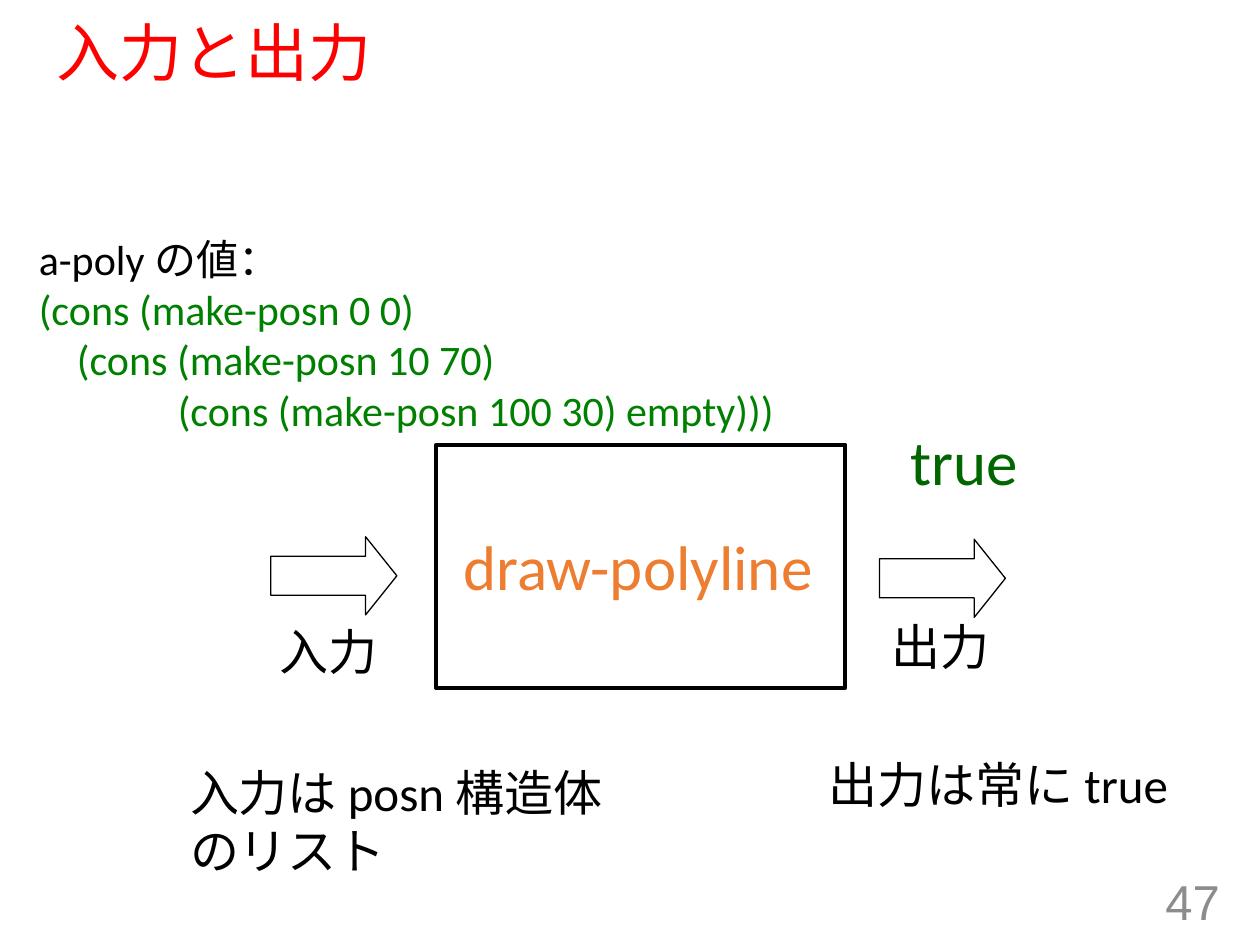
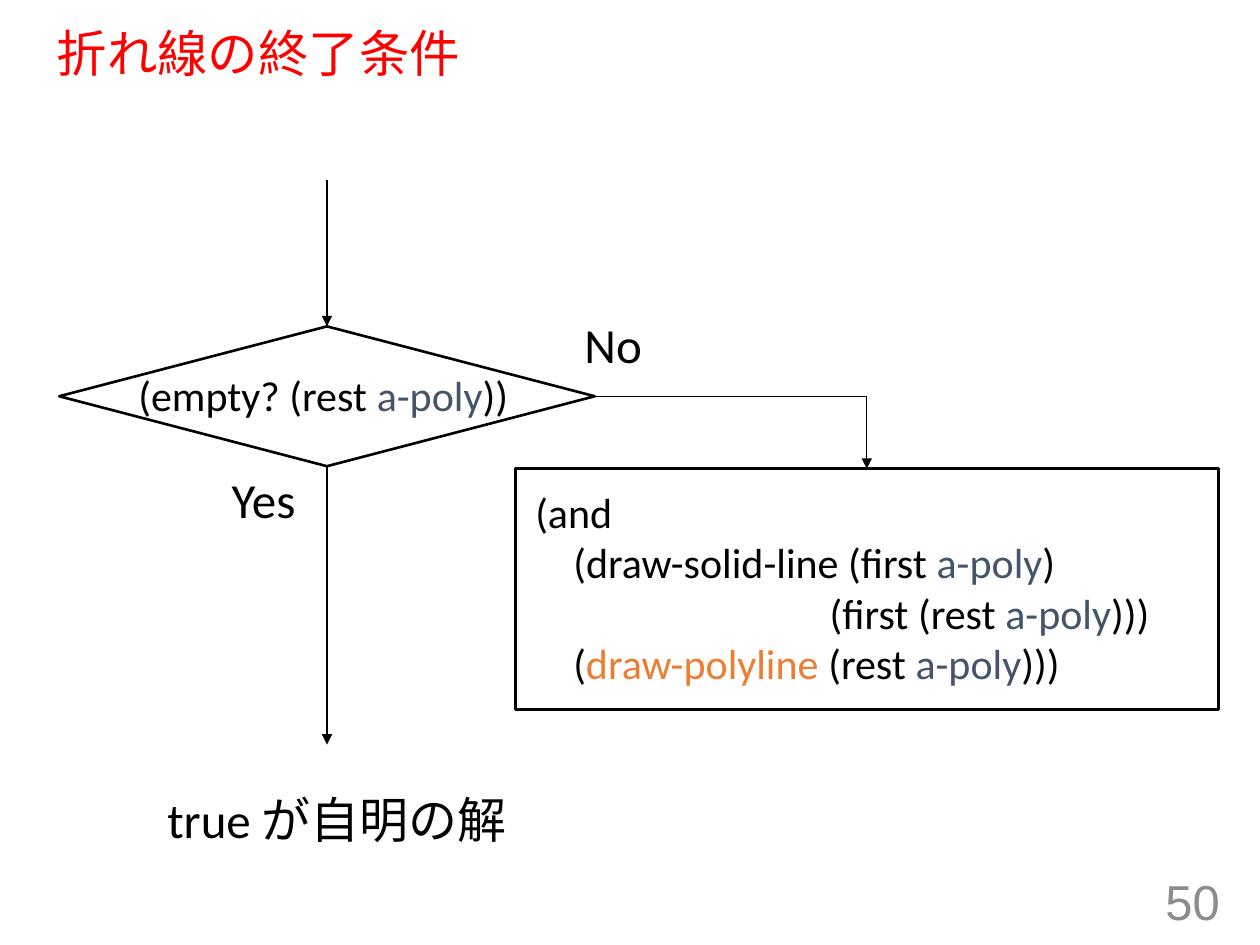
from lxml import etree
from pptx import Presentation
from pptx.dml.color import RGBColor
from pptx.enum.shapes import MSO_CONNECTOR, MSO_SHAPE
from pptx.enum.text import MSO_ANCHOR, MSO_AUTO_SIZE, PP_ALIGN
from pptx.oxml.ns import qn
from pptx.util import Inches, Pt

RECT, ARROW = MSO_SHAPE.RECTANGLE, MSO_SHAPE.RIGHT_ARROW
DECISION = MSO_SHAPE.FLOWCHART_DECISION
STRAIGHT, ELBOW = MSO_CONNECTOR.STRAIGHT, MSO_CONNECTOR.ELBOW
MIDDLE, LEFT, RIGHT = MSO_ANCHOR.MIDDLE, PP_ALIGN.LEFT, PP_ALIGN.RIGHT
TOP_SITE, BOTTOM_SITE, RIGHT_SITE = 0, 2, 3

COLORS = {"title": "FF0000", "text": "000000", "number": "8C8C8C",
          "function": "ED7D31", "result": "006600", "value": "008000",
          "variable": "44546A"}
TITLE_BOX = (0.35, 0.19, 9.25, 0.51)
NUMBER_BOX = (7.53, 6.95, 2.25, 0.4)

# A line is a list of (text, colour name) runs.
POLY = ("a-poly", "variable")


def plain(text, color="text"):
    return [(text, color)]


# Each text: box, size in points, wrap, lines
IO_TEXTS = [
    ((3.58, 4.14, 3.01, 0.7), 36, False, [plain("draw-polyline", "function")]),
    ((7.13, 3.3, 1.06, 0.71), 36, False, [plain("true", "result")]),
    ((2.12, 4.88, 0.98, 0.57), 28, False, [plain("入力")]),
    ((6.98, 4.84, 0.98, 0.57), 28, False, [plain("出力")]),
    ((0.21, 1.8, 6.16, 1.72), 24, False, [
        plain("a-poly の値："),
        plain("(cons (make-posn 0 0)", "value"),
        plain("    (cons (make-posn 10 70)", "value"),
        plain("        (cons (make-posn 100 30) empty)))", "value")]),
    ((1.41, 6, 3.52, 1.04), 28, True,
     [plain("入力は posn 構造体"), plain("のリスト")]),
    ((6.48, 5.94, 2.92, 0.57), 28, True, [plain("出力は常に true")]),
]
FUNCTION_BOX = (3.46, 3.53, 3.25, 1.93)
IO_ARROWS = [(2.15, 4.26, 1, 0.62), (6.98, 4.28, 1, 0.62)]

END_TEXTS = [
    ((1, 2.88, 3.19, 0.51), 24, False,
     [[("(empty? (rest ", "text"), POLY, ("))", "text")]]),
    ((4.15, 3.81, 5.38, 1.72), 24, True, [
        plain("(and"),
        [("    (draw-solid-line (first ", "text"), POLY, (")", "text")],
        [(" " * 31 + "(first (rest ", "text"), POLY, (")))", "text")],
        [("    (", "text"), ("draw-polyline", "function"), (" (rest ", "text"),
         POLY, (")))", "text")]]),
    ((1.74, 3.68, 0.71, 0.57), 28, False, [plain("Yes")]),
    ((4.54, 2.45, 0.68, 0.57), 28, False, [plain("No")]),
    ((1.23, 6.22, 2.92, 0.57), 28, True, [plain("true が自明の解")]),
]
STEP_BOX = (4.09, 3.72, 5.58, 1.91)
DECISION_BOX = (0.47, 2.59, 4.25, 1.11)
FLOW_TOP, FLOW_BOTTOM = 1.43, 5.91


def inches(values):
    return [Inches(v) for v in values]


def style(font, size, color, name="Calibri"):
    font.size, font.name = Pt(size), name
    font.color.rgb = RGBColor.from_string(COLORS[color])


def add_text(slide, box, size, wrap, lines, font="Calibri"):
    tf = slide.shapes.add_textbox(*inches(box)).text_frame
    tf.word_wrap = wrap
    tf.auto_size = MSO_AUTO_SIZE.SHAPE_TO_FIT_TEXT
    for i, line in enumerate(lines):
        p = tf.add_paragraph() if i else tf.paragraphs[0]
        for text, color in line:
            r = p.add_run()
            r.text = text
            style(r.font, size, color, font)
    return tf


def add_outline(slide, kind, box, width):
    sp = slide.shapes.add_shape(kind, *inches(box))
    sp.shadow.inherit = False
    sp.fill.background()
    sp.line.color.rgb = RGBColor.from_string(COLORS["text"])
    sp.line.width = Pt(width)
    return sp


def add_arrow(slide, kind, ends, width, begin=None, end=None):
    """begin and end are (shape, site) pairs to join."""
    c = slide.shapes.add_connector(kind, *inches(ends))
    if begin:
        c.begin_connect(*begin)
    if end:
        c.end_connect(*end)
    c.line.color.rgb = RGBColor.from_string(COLORS["text"])
    c.line.width = Pt(width)
    etree.SubElement(c.line._get_or_add_ln(), qn("a:tailEnd"), type="triangle")
    etree.SubElement(c._element.spPr, qn("a:effectLst"))
    return c


def add_slide(prs, title, size, number):
    slide = prs.slides.add_slide(prs.slide_layouts[5])
    sp = slide.shapes.title
    sp.left, sp.top, sp.width, sp.height = inches(TITLE_BOX)
    tf = sp.text_frame
    tf.text = title
    tf.auto_size = MSO_AUTO_SIZE.NONE
    tf.vertical_anchor = MIDDLE
    p = tf.paragraphs[0]
    p.alignment, p.line_spacing = LEFT, 0.9
    style(p.runs[0].font, size, "title", "Arial")

    tf = add_text(slide, NUMBER_BOX, 28, True, [plain(number, "number")], "Arial")
    tf.auto_size = MSO_AUTO_SIZE.NONE
    tf.vertical_anchor = MIDDLE
    tf.paragraphs[0].alignment = RIGHT
    return slide


def build_input_output(prs):
    slide = add_slide(prs, "入力と出力", 36, "47")
    add_outline(slide, RECT, FUNCTION_BOX, 2.25)
    for box in IO_ARROWS:
        sp = add_outline(slide, ARROW, box, 0.75)
        sp.adjustments[1] = 0.4
    frames = [add_text(slide, *text) for text in IO_TEXTS]
    last_value = frames[4].paragraphs[-1]
    last_value.level = 1
    last_value._p.get_or_add_pPr().set("marL", str(Inches(0.5)))


def build_end_condition(prs):
    slide = add_slide(prs, "折れ線の終了条件", 28.8, "50")
    step = add_outline(slide, RECT, STEP_BOX, 1.5)
    decision = add_outline(slide, DECISION, DECISION_BOX, 1.5)
    left, top, width, height = DECISION_BOX
    x, bottom = left + width / 2, top + height
    add_arrow(slide, STRAIGHT, (x, FLOW_TOP, x, top), 1.5,
              end=(decision, TOP_SITE))
    add_arrow(slide, STRAIGHT, (x, bottom, x, FLOW_BOTTOM), 1.5,
              begin=(decision, BOTTOM_SITE))
    no_branch = add_arrow(
        slide, ELBOW,
        (left + width, top + height / 2, STEP_BOX[0] + STEP_BOX[2] / 2, STEP_BOX[1]),
        0.75, (decision, RIGHT_SITE), (step, TOP_SITE))
    no_branch._element.spPr.find(qn("a:prstGeom")).set("prst", "bentConnector2")
    for text in END_TEXTS:
        add_text(slide, *text)


def main():
    prs = Presentation()
    prs.slide_width, prs.slide_height = Inches(10), Inches(7.5)
    build_input_output(prs)
    build_end_condition(prs)
    prs.save("out.pptx")


if __name__ == "__main__":
    main()
